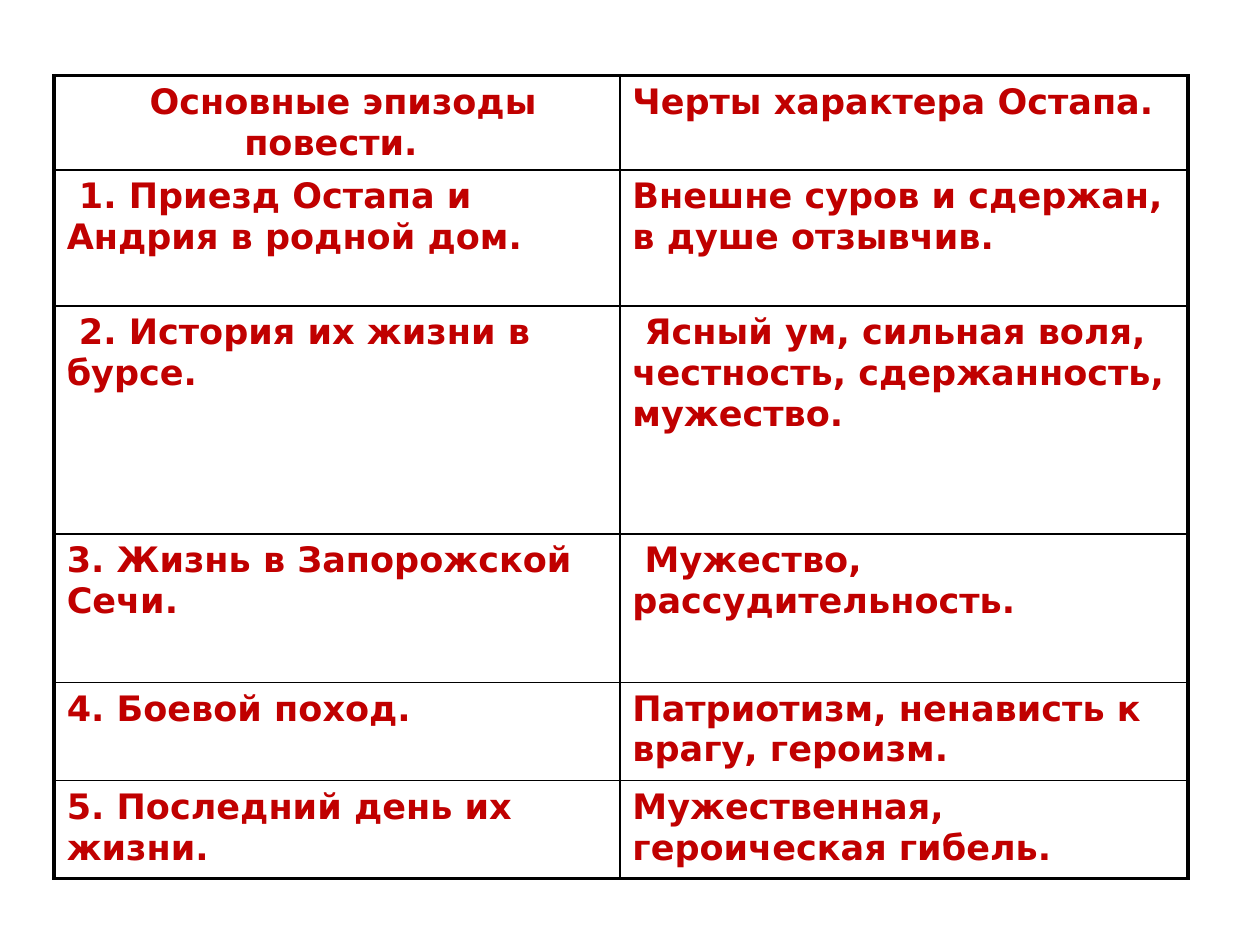
from lxml import etree
from pptx import Presentation
from pptx import util as u
from pptx.dml.color import RGBColor
from pptx.enum import text
from pptx.oxml import ns

RED = RGBColor(0xC0, 0x00, 0x00)
BLACK = RGBColor(0x00, 0x00, 0x00)
FONT = "DejaVu Sans"
THIN, THICK = 1, 2.25

COLUMN_WEIGHTS = (4.49, 4.51)
ROW_WEIGHTS = (0.75, 1.08, 1.81, 1.18, 0.78, 0.78)
EPISODES = (
    (" Основные эпизоды повести. ", "Черты характера Остапа."),
    (" 1. Приезд Остапа и Андрия в родной дом.",
     "Внешне суров и сдержан, в душе отзывчив."),
    (" 2. История их жизни в бурсе.",
     " Ясный ум, сильная воля, честность, сдержанность, мужество."),
    ("3. Жизнь в Запорожской Сечи.", " Мужество, рассудительность."),
    ("4. Боевой поход.", "Патриотизм, ненависть к врагу, героизм."),
    ("5. Последний день их жизни.", "Мужественная, героическая гибель."),
)


def write_text(tf, content, *, size=20, color=RED, bold=True,
               align=text.PP_ALIGN.LEFT):
    p = tf.paragraphs[0]
    p.alignment = align
    r = p.add_run()
    r.text = content
    r.font.name = FONT
    r.font.size = u.Pt(size)
    r.font.bold = bold
    r.font.color.rgb = color


def add_border(cell, side, width):
    tc_pr = cell._tc.get_or_add_tcPr()
    line = etree.SubElement(tc_pr, ns.qn(f"a:ln{side}"), w=str(u.Pt(width)))
    fill = etree.SubElement(line, ns.qn("a:solidFill"))
    etree.SubElement(fill, ns.qn("a:srgbClr"), val=str(BLACK))


def share_out(tracks, weights, total, attribute):
    for track, weight in zip(tracks, weights):
        setattr(track, attribute, round(total * weight / sum(weights)))


def episode_table(s, left, top, width, height):
    last_row, last_col = len(EPISODES) - 1, len(COLUMN_WEIGHTS) - 1
    frame = s.shapes.add_table(last_row + 1, last_col + 1,
                               left, top, width, height)
    table = frame.table
    table.first_row = table.horz_banding = False
    share_out(table.columns, COLUMN_WEIGHTS, width, "width")
    share_out(table.rows, ROW_WEIGHTS, height, "height")
    for row, contents in enumerate(EPISODES):
        for col, content in enumerate(contents):
            cell = table.cell(row, col)
            outer = {"L": col == 0, "R": col == last_col,
                     "T": row == 0, "B": row == last_row}
            for side, is_outer in outer.items():
                add_border(cell, side, THICK if is_outer else THIN)
            cell.fill.background()
            centred = row == 0 and col == 0
            write_text(cell.text_frame, content,
                       align=text.PP_ALIGN.CENTER if centred
                       else text.PP_ALIGN.LEFT)


def main():
    prs = Presentation()
    prs.slide_width, prs.slide_height = u.Inches(10), u.Inches(7.5)
    w, h = prs.slide_width, prs.slide_height
    s = prs.slides.add_slide(prs.slide_layouts[6])
    episode_table(s, round(0.043 * w), round(0.08 * h),
                  round(0.9 * w), round(0.85 * h))
    prs.save("out.pptx")


if __name__ == "__main__":
    main()
